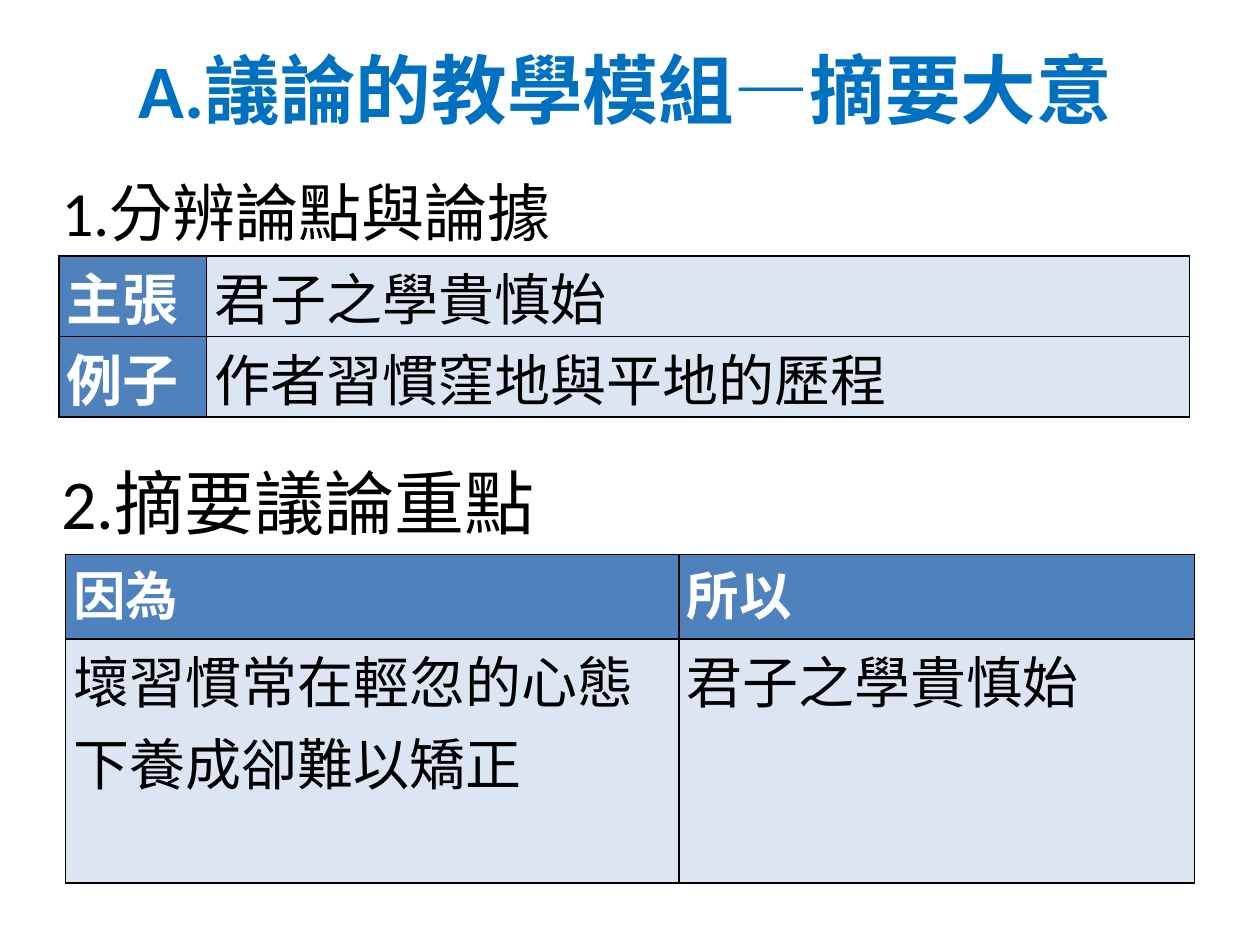
from dataclasses import dataclass

from lxml.etree import SubElement
from pptx import Presentation
from pptx.dml.color import RGBColor
from pptx.enum.lang import MSO_LANGUAGE_ID as Lang
from pptx.enum.text import MSO_ANCHOR as Anchor, PP_ALIGN as Align
from pptx.oxml.ns import qn
from pptx.util import Inches, Pt

BLACK, WHITE, TITLE_BLUE = "000000", "FFFFFF", "0070C0"
HEADER_BLUE, BODY_BLUE = "4F81BD", "DCE6F2"


@dataclass
class Entry:
    text: str
    header: bool = False
    size: float = 32


@dataclass
class Grid:
    left: float
    top: float
    widths: list[float]
    heights: list[float]
    rows: list[list[Entry]]


@dataclass
class Label:
    text: str
    left: float
    top: float
    width: float
    height: float
    size: float
    color: str = BLACK
    bold: bool = False
    align: Align = Align.LEFT
    anchor: Anchor = Anchor.TOP


def rgb(color: str) -> RGBColor:
    return RGBColor.from_string(color)


def write(frame, text: str, *, size: float, color: str = BLACK, bold: bool = False,
          font: str = "Calibri", align: Align = Align.LEFT) -> None:
    frame.word_wrap = True
    paragraph = frame.paragraphs[0]
    paragraph.alignment = align
    run = paragraph.add_run()
    run.text = text
    run.font.name, run.font.size, run.font.bold = font, Pt(size), bold
    run.font.color.rgb = rgb(color)
    run.font.language_id = Lang.TRADITIONAL_CHINESE


def add_label(slide, label: Label) -> None:
    box = slide.shapes.add_textbox(Inches(label.left), Inches(label.top),
                                   Inches(label.width), Inches(label.height))
    box.text_frame.vertical_anchor = label.anchor
    write(box.text_frame, label.text, size=label.size, color=label.color,
          bold=label.bold, align=label.align)


def add_borders(cell, color: str = BLACK, width: float = 1) -> None:
    properties = cell._tc.get_or_add_tcPr()
    for side in ("a:lnL", "a:lnR", "a:lnT", "a:lnB"):
        line = SubElement(properties, qn(side), w=str(Pt(width)))
        SubElement(SubElement(line, qn("a:solidFill")), qn("a:srgbClr"), val=color)


def add_grid(slide, grid: Grid) -> None:
    table = slide.shapes.add_table(
        len(grid.heights), len(grid.widths), Inches(grid.left), Inches(grid.top),
        Inches(sum(grid.widths)), Inches(sum(grid.heights))).table
    table.first_row = table.horz_banding = False
    for column, width in zip(table.columns, grid.widths):
        column.width = Inches(width)
    for row, height, entries in zip(table.rows, grid.heights, grid.rows):
        row.height = Inches(height)
        for cell, entry in zip(row.cells, entries):
            cell.margin_left = cell.margin_right = Inches(0.06)
            cell.margin_top = cell.margin_bottom = 0
            add_borders(cell)
            cell.fill.solid()
            cell.fill.fore_color.rgb = rgb(HEADER_BLUE if entry.header else BODY_BLUE)
            write(cell.text_frame, entry.text, size=entry.size, font="Arial",
                  color=WHITE if entry.header else BLACK, bold=entry.header)


LABELS = [
    Label("A.議論的教學模組—摘要大意", 0.7, 0.23, 8.52, 0.94, 43.2,
          TITLE_BLUE, True, Align.CENTER, Anchor.MIDDLE),
    Label("1.分辨論點與論據", 0.39, 1.33, 8.18, 0.7, 36),
    Label("2.摘要議論重點", 0.39, 3.6, 8.18, 0.8, 40),
]

GRIDS = [
    Grid(0.47, 2.03, [1.17, 7.8], [0.64, 0.64], [
        [Entry("主張", header=True), Entry("君子之學貴慎始")],
        [Entry("例子", header=True), Entry("作者習慣窪地與平地的歷程")],
    ]),
    Grid(0.52, 4.4, [4.87, 4.09], [0.67, 1.94], [
        [Entry("因為", header=True, size=30), Entry("所以", header=True, size=30)],
        [Entry("壞習慣常在輕忽的心態下養成卻難以矯正"), Entry("君子之學貴慎始")],
    ]),
]


def main() -> None:
    deck = Presentation()
    deck.slide_width, deck.slide_height = Inches(10), Inches(7.5)
    slide = deck.slides.add_slide(deck.slide_layouts[6])
    for label in LABELS:
        add_label(slide, label)
    for grid in GRIDS:
        add_grid(slide, grid)
    deck.save("out.pptx")


if __name__ == "__main__":
    main()
